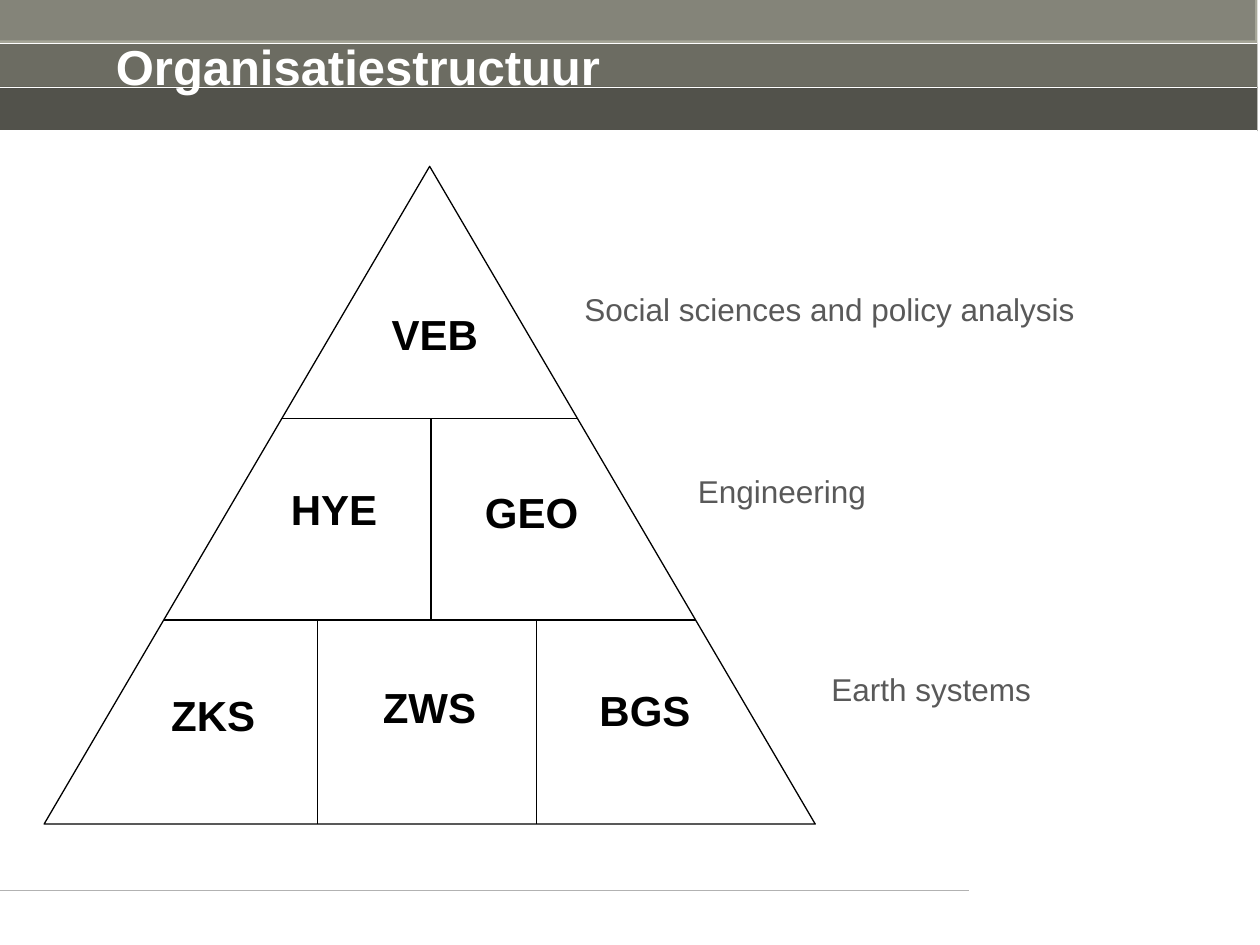
"""Build the organisation pyramid slide."""
from dataclasses import dataclass

from lxml import etree
from pptx import Presentation
from pptx.dml.color import RGBColor
from pptx.enum.shapes import MSO_CONNECTOR, MSO_SHAPE
from pptx.enum.text import MSO_ANCHOR, PP_ALIGN
from pptx.oxml.ns import qn
from pptx.util import Inches, Pt

LINE = MSO_CONNECTOR.STRAIGHT
RECT = MSO_SHAPE.RECTANGLE
PEAK = MSO_SHAPE.ISOSCELES_TRIANGLE
LEFT = PP_ALIGN.LEFT
TOP = MSO_ANCHOR.TOP


@dataclass(frozen=True)
class Theme:
    font: str = "Arial"
    white: str = "FFFFFF"
    black: str = "000000"
    band: str = "A6A698"
    rule: str = "B2B2B2"
    grey: str = "595959"
    head: int = 28
    unit: int = 24
    note: int = 18
    thin: float = 0.75


THEME = Theme()
SIZE = (10, 7.5)
TITLE = ("Organisatiestructuur", (0.82, 0.24, 4.09, 0.57))
BAR = (9.98, 1.04)
SHADES = [(-0.02, -0.03, 20), (0, 0.35, 35), (0, 0.69, 50)]
FOOT = (7.69, 7.07)
BASE = (0.35, 1.32, 6.12, 5.22)
TIERS = [
    {"top": 1.32, "cuts": [], "units": [("VEB", 3.01, 2.4, 0.89)],
     "note": ("Social sciences and policy analysis", 4.54, 2.25, 4.13)},
    {"top": 3.32, "cuts": [3.42],
     "units": [("HYE", 2.21, 3.79, 0.89), ("GEO", 3.75, 3.81, 0.95)],
     "note": ("Engineering", 5.44, 3.7, 1.55)},
    {"top": 4.92, "cuts": [2.52, 4.26],
     "units": [("ZKS", 1.26, 5.42, 0.88), ("ZWS", 2.94, 5.36, 0.95),
               ("BGS", 4.66, 5.38, 0.93)],
     "note": ("Earth systems", 6.5, 5.27, 1.8)},
]


def rgb(tone):
    return RGBColor.from_string(tone)


def inch(box):
    return [Inches(n) for n in box]


def shape(slide, kind, box, fill, edge=None, alpha=None):
    item = slide.shapes.add_shape(kind, *inch(box))
    item.shadow.inherit = False
    item.fill.solid()
    item.fill.fore_color.rgb = rgb(fill)
    if edge:
        item.line.color.rgb = rgb(edge)
        item.line.width = Pt(THEME.thin)
    else:
        item.line.fill.background()
    if alpha:
        tone = item.fill._xPr.find(".//" + qn("a:srgbClr"))
        etree.SubElement(tone, qn("a:alpha"), val=str(alpha * 1000))


def line(slide, x1, y1, x2, y2, tone=THEME.black):
    item = slide.shapes.add_connector(LINE, *inch((x1, y1, x2, y2)))
    item.line.color.rgb = rgb(tone)
    item.line.width = Pt(THEME.thin)
    etree.SubElement(item._element.spPr, qn("a:effectLst"))


def write(item, text, size, tone, bold=False):
    frame = item.text_frame
    frame.word_wrap = False
    frame.vertical_anchor = TOP
    para = frame.paragraphs[0]
    para.alignment = LEFT
    run = para.add_run()
    run.text = text
    font = run.font
    font.name, font.size, font.bold = THEME.font, Pt(size), bold
    font.color.rgb = rgb(tone)


def label(slide, text, x, y, wide, size, tone, bold=False):
    high = 0.5 if size == THEME.unit else 0.4
    item = slide.shapes.add_textbox(*inch((x, y, wide, high)))
    write(item, text, size, tone, bold)


def header(slide):
    wide, high = BAR
    shape(slide, RECT, (0, 0, wide, high), THEME.band)
    for x, y, alpha in SHADES:
        shape(slide, RECT, (x, y, wide, 0.35), THEME.black, alpha=alpha)
    for step in (1, 2, 3):
        y = high * step / 3
        line(slide, 0, y, wide, y, THEME.white)
    line(slide, FOOT[0], FOOT[1], 0, FOOT[1], THEME.rule)
    title = slide.shapes.title
    text, box = TITLE
    title.left, title.top, title.width, title.height = inch(box)
    write(title, text, THEME.head, THEME.white, bold=True)
    slide.shapes._spTree.append(title._element)


def pyramid(slide):
    left, top, wide, high = BASE
    shape(slide, PEAK, BASE, THEME.white, edge=THEME.black)
    mid = left + wide / 2
    ends = [tier["top"] for tier in TIERS[1:]] + [top + high]
    for tier, end in zip(TIERS, ends):
        y = tier["top"]
        half = wide / 2 * (y - top) / high
        if half:
            line(slide, mid - half, y, mid + half, y)
        for x in tier["cuts"]:
            line(slide, x, y, x, end)
        for unit in tier["units"]:
            label(slide, *unit, size=THEME.unit, tone=THEME.black, bold=True)
        label(slide, *tier["note"], size=THEME.note, tone=THEME.grey)


def main():
    deck = Presentation()
    deck.slide_width, deck.slide_height = inch(SIZE)
    slide = deck.slides.add_slide(deck.slide_layouts[5])
    header(slide)
    pyramid(slide)
    deck.save("out.pptx")


if __name__ == "__main__":
    main()
